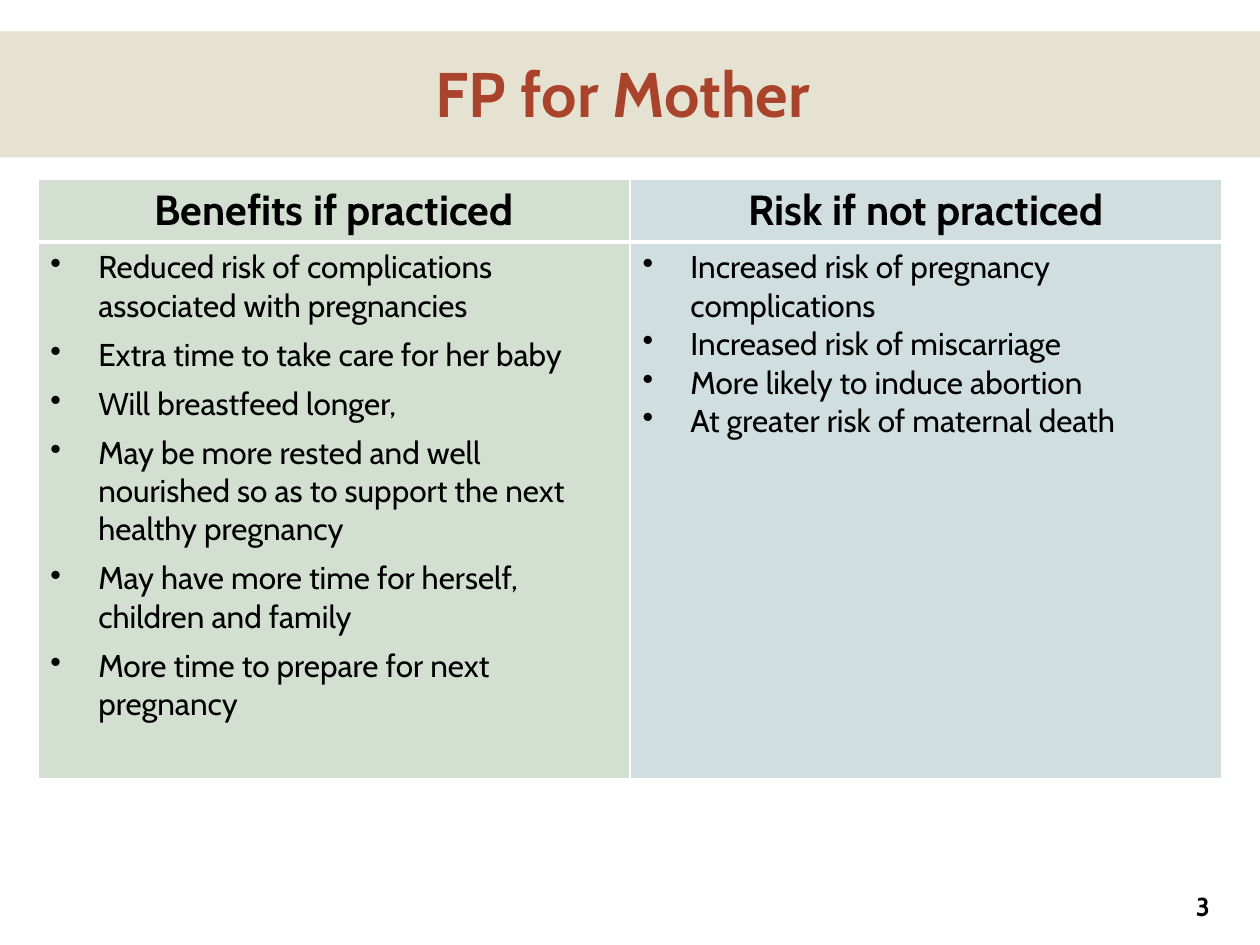
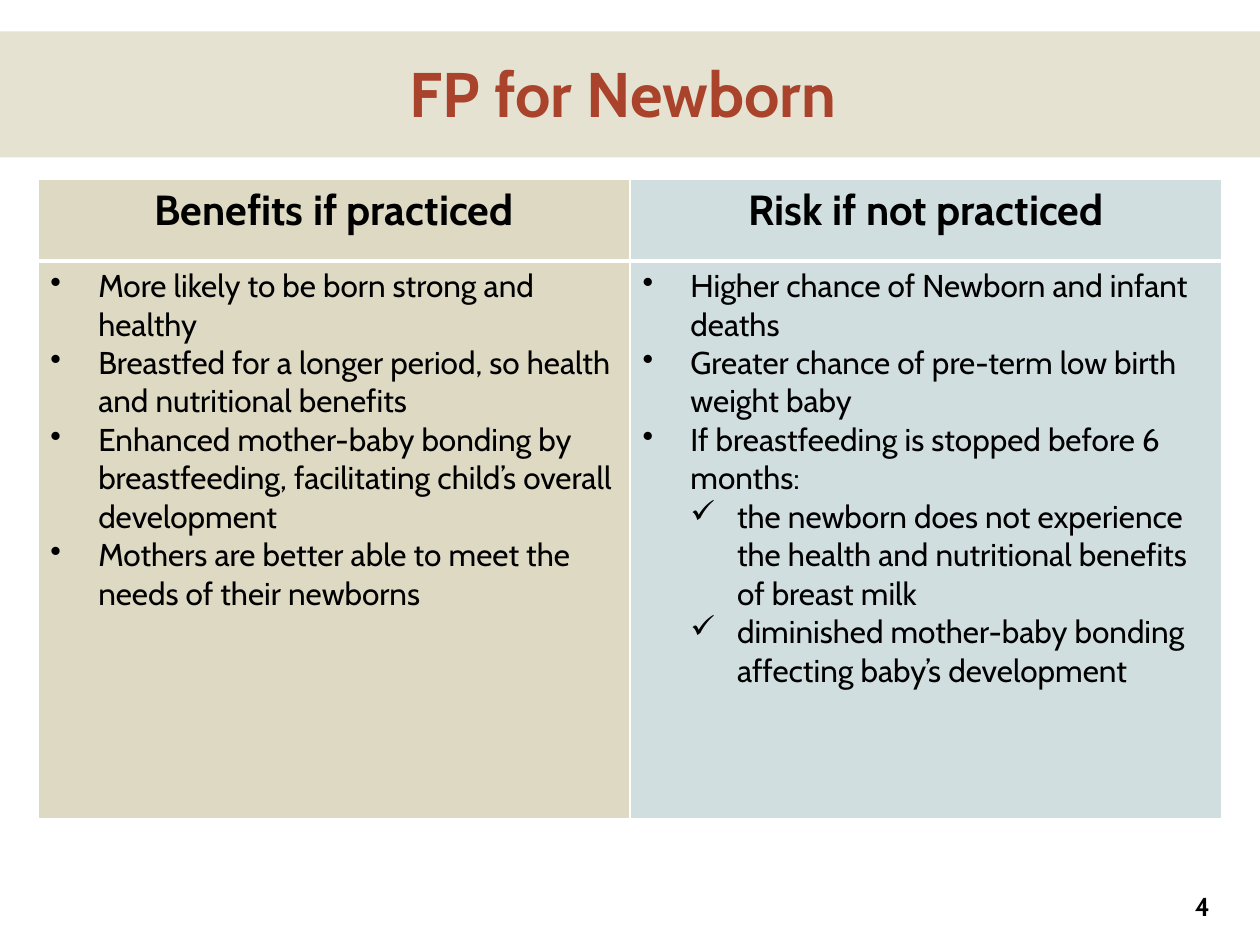
from dataclasses import dataclass

import pptx
import pptx.dml.color
import pptx.enum.shapes
import pptx.enum.text
import pptx.oxml
import pptx.oxml.ns
import pptx.slide
import pptx.table
import pptx.text.text
import pptx.util
from pptx.dml.color import RGBColor
from pptx.enum.text import MSO_ANCHOR, PP_ALIGN
from pptx.util import Inches

FONT = "Cabin"
BLACK = RGBColor(0x00, 0x00, 0x00)
WHITE = RGBColor(0xFF, 0xFF, 0xFF)
RUST = RGBColor(0xA9, 0x43, 0x2B)
SAND = RGBColor(0xDD, 0xD9, 0xC3)
SAGE = RGBColor(0xD2, 0xDF, 0xD1)
MIST = RGBColor(0xD1, 0xDE, 0xDF)

SLIDE_WIDTH = 10
MARGIN = 0.3
CONTENT_WIDTH = SLIDE_WIDTH - 2 * MARGIN
BAND_OPACITY = 76
THIN_BORDER = 1
THICK_BORDER = 3


@dataclass(frozen=True)
class Item:
    text: str
    level: int = 0


@dataclass(frozen=True)
class Column:
    heading: str
    color: RGBColor
    items: tuple[Item, ...]
    space_after: float = 0


@dataclass(frozen=True)
class Comparison:
    title: str
    number: int
    header_height: float
    body_height: float
    columns: tuple[Column, ...]


@dataclass(frozen=True)
class Bullet:
    symbol: str
    left: float
    hanging: float


BULLETS = (Bullet("•", 0.38, 0.38), Bullet("✓", 0.75, 0.37))

COMPARISONS = (
    Comparison("FP for Mother ", 3, 0.5, 4.26, (
        Column("Benefits if practiced", SAGE, (
            Item("Reduced risk of complications associated with pregnancies"),
            Item("Extra time to take care for her baby"),
            Item("Will breastfeed longer,"),
            Item("May be more rested and well nourished so as to support the next healthy pregnancy"),
            Item("May have more time for herself, children and family"),
            Item("More time to prepare for next pregnancy"),
        ), space_after=6),
        Column("Risk if not practiced", MIST, (
            Item("Increased risk of pregnancy complications"),
            Item("Increased risk of miscarriage"),
            Item("More likely to induce abortion"),
            Item("At greater risk of maternal death"),
        )),
    )),
    Comparison("FP for Newborn ", 4, 0.65, 4.43, (
        Column("Benefits if practiced", SAND, (
            Item("More likely to be born strong and healthy"),
            Item("Breastfed for a longer period, so health and nutritional benefits"),
            Item("Enhanced mother-baby bonding by breastfeeding, facilitating child’s overall development"),
            Item("Mothers are better able to meet the needs of their newborns"),
        )),
        Column("Risk if not practiced", MIST, (
            Item("Higher chance of Newborn and infant deaths"),
            Item("Greater chance of pre-term low birth weight baby"),
            Item("If breastfeeding is stopped before 6 months:"),
            Item("the newborn does not experience the health and nutritional benefits of breast milk", 1),
            Item("diminished mother-baby bonding affecting baby’s development", 1),
        )),
    )),
)


def add_child(parent, tag: str, **attributes: str):
    child = parent.makeelement(pptx.oxml.ns.qn(tag), attributes)
    parent.append(child)
    return child


def write_text(paragraph: pptx.text.text._Paragraph, text: str, *, size: float,
               color: RGBColor = BLACK, bold: bool = False,
               align: PP_ALIGN = PP_ALIGN.LEFT, space_after: float = 0) -> None:
    paragraph.alignment = align
    paragraph.space_after = pptx.util.Pt(space_after)
    run = paragraph.add_run()
    run.text = text
    run.font.name = FONT
    run.font.size = pptx.util.Pt(size)
    run.font.bold = bold
    run.font.color.rgb = color


def add_label(slide: pptx.slide.Slide, left: float, top: float, width: float,
              height: float, text: str, anchor: MSO_ANCHOR, **text_format) -> None:
    frame = slide.shapes.add_textbox(
        Inches(left), Inches(top), Inches(width), Inches(height)).text_frame
    frame.word_wrap = True
    frame.vertical_anchor = anchor
    write_text(frame.paragraphs[0], text, bold=True, **text_format)


def add_band(slide: pptx.slide.Slide) -> None:
    band = slide.shapes.add_shape(
        pptx.enum.shapes.MSO_SHAPE.RECTANGLE,
        Inches(0), Inches(0.25), Inches(SLIDE_WIDTH), Inches(1))
    band.shadow.inherit = False
    band.line.fill.background()
    band.fill.solid()
    band.fill.fore_color.rgb = SAND
    color = band.fill._xPr.find(".//" + pptx.oxml.ns.qn("a:srgbClr"))
    add_child(color, "a:alpha", val=str(BAND_OPACITY * 1000))


def set_borders(cell: pptx.table._Cell, top: float, bottom: float) -> None:
    properties = cell._tc.get_or_add_tcPr()
    widths = {"a:lnL": THIN_BORDER, "a:lnR": THIN_BORDER, "a:lnT": top, "a:lnB": bottom}
    for index, (tag, width) in enumerate(widths.items()):
        border = add_child(properties, tag, w=str(pptx.util.Pt(width)))
        add_child(add_child(border, "a:solidFill"), "a:srgbClr", val=str(WHITE))
        properties.insert(index, border)


def set_bullet(paragraph: pptx.text.text._Paragraph, level: int) -> None:
    bullet = BULLETS[level]
    paragraph.level = level
    properties = paragraph._p.get_or_add_pPr()
    properties.set("marL", str(Inches(bullet.left)))
    properties.set("indent", str(-Inches(bullet.hanging)))
    add_child(properties, "a:buChar", char=bullet.symbol)


def fill_cell(cell: pptx.table._Cell, color: RGBColor, top: float, bottom: float) -> None:
    cell.fill.solid()
    cell.fill.fore_color.rgb = color
    set_borders(cell, top, bottom)


def add_comparison_table(slide: pptx.slide.Slide, comparison: Comparison) -> None:
    heights = (comparison.header_height, comparison.body_height)
    table = slide.shapes.add_table(
        2, len(comparison.columns), Inches(MARGIN), Inches(1.42),
        Inches(CONTENT_WIDTH), Inches(sum(heights))).table
    for row, height in zip(table.rows, heights):
        row.height = Inches(height)
    for index, column in enumerate(comparison.columns):
        header, body = table.cell(0, index), table.cell(1, index)
        fill_cell(header, column.color, THIN_BORDER, THICK_BORDER)
        fill_cell(body, column.color, THICK_BORDER, THIN_BORDER)
        write_text(header.text_frame.paragraphs[0], column.heading,
                   size=24, bold=True, align=PP_ALIGN.CENTER)
        frame = body.text_frame
        for position, item in enumerate(column.items):
            paragraph = frame.add_paragraph() if position else frame.paragraphs[0]
            set_bullet(paragraph, item.level)
            write_text(paragraph, item.text, size=18, space_after=column.space_after)


def add_comparison_slide(presentation, comparison: Comparison) -> None:
    slide = presentation.slides.add_slide(presentation.slide_layouts[6])
    add_band(slide)
    add_label(slide, 8.74, 7.03, 0.96, 0.32, str(comparison.number),
              MSO_ANCHOR.MIDDLE, size=14.8, align=PP_ALIGN.RIGHT)
    add_comparison_table(slide, comparison)
    add_label(slide, MARGIN, 0.25, CONTENT_WIDTH, 0.83, comparison.title,
              MSO_ANCHOR.BOTTOM, size=36, color=RUST, align=PP_ALIGN.CENTER)


def main() -> None:
    presentation = pptx.Presentation()
    presentation.slide_width = Inches(SLIDE_WIDTH)
    presentation.slide_height = Inches(7.5)
    for comparison in COMPARISONS:
        add_comparison_slide(presentation, comparison)
    presentation.save("out.pptx")


if __name__ == "__main__":
    main()
